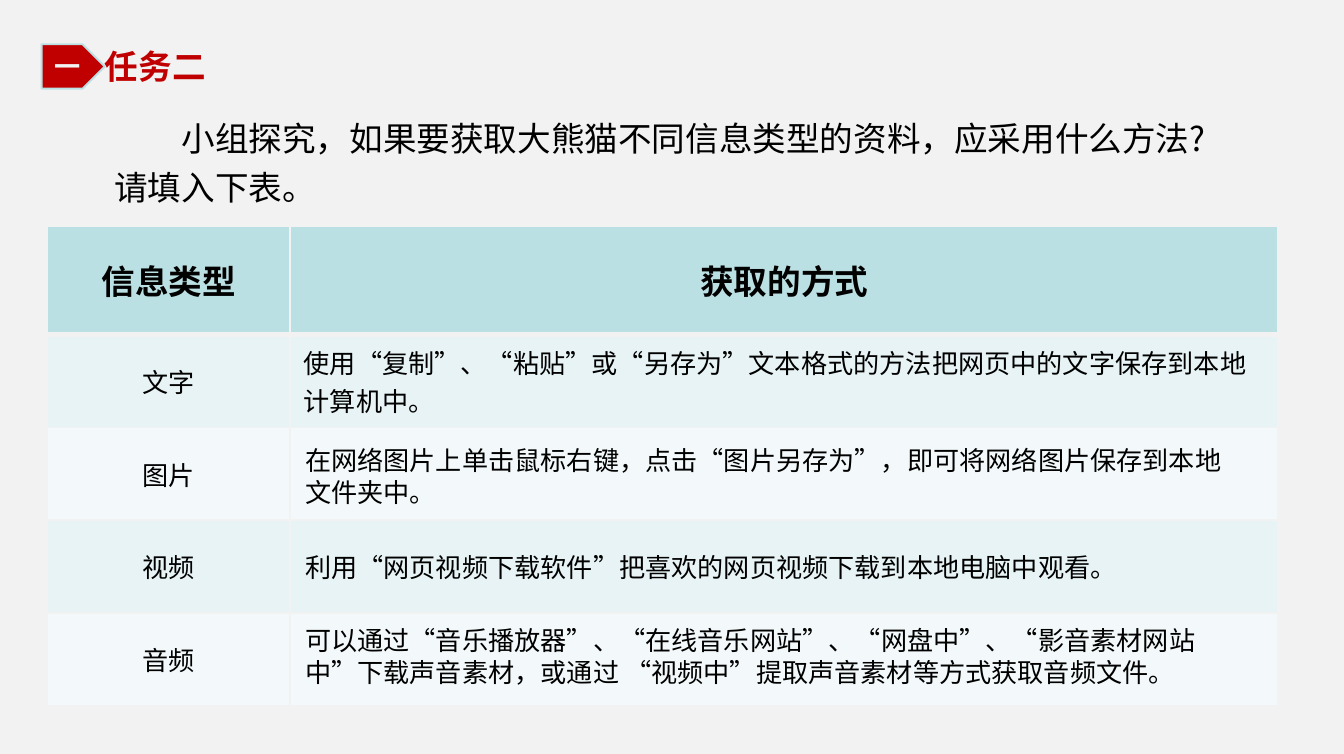
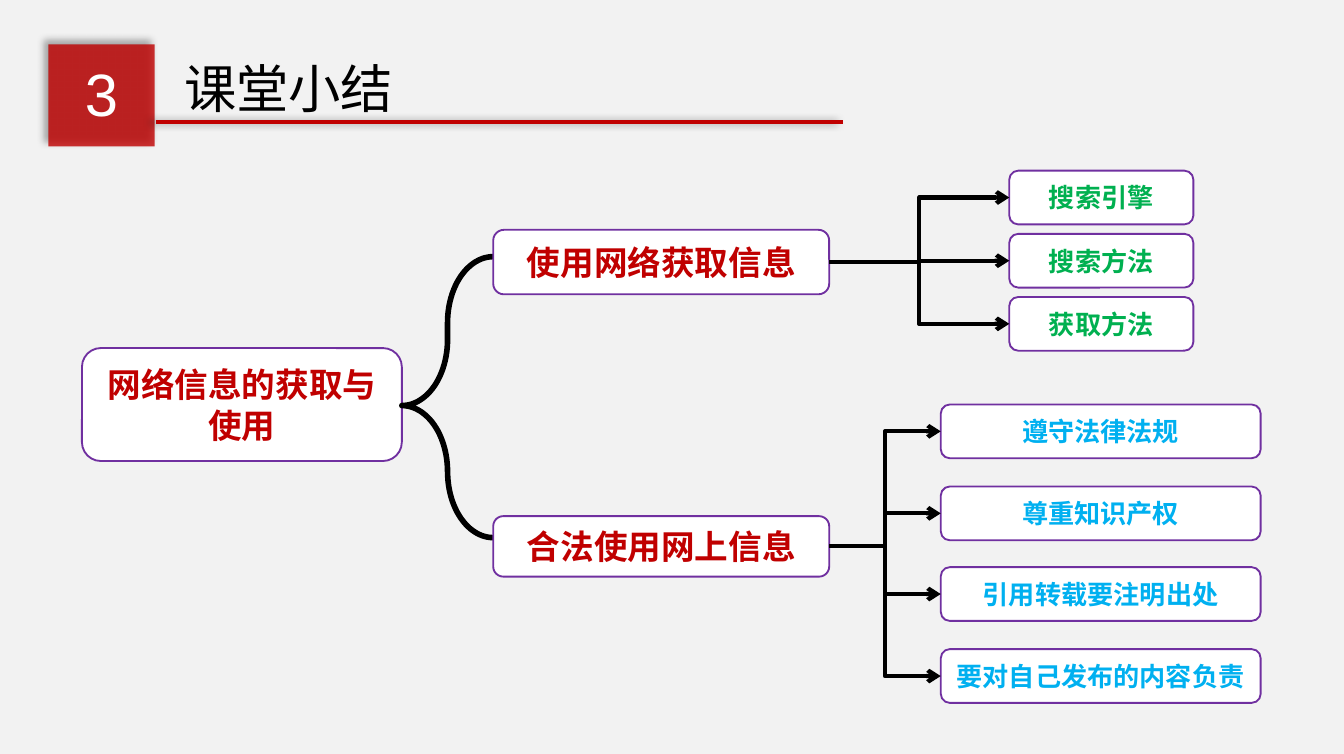
import dataclasses

import pptx
import pptx.dml.color
import pptx.enum.shapes
import pptx.enum.text
import pptx.oxml.ns
import pptx.util
from lxml import etree

Inches = pptx.util.Inches
Pt = pptx.util.Pt
qn = pptx.oxml.ns.qn
SHAPE = pptx.enum.shapes.MSO_SHAPE
CONNECTOR = pptx.enum.shapes.MSO_CONNECTOR
ALIGN = pptx.enum.text.PP_ALIGN
ANCHOR = pptx.enum.text.MSO_ANCHOR


@dataclasses.dataclass(frozen=True)
class Theme:
    background: str = "F2F2F2"
    red: str = "C00000"
    black: str = "000000"
    white: str = "FFFFFF"
    header: str = "BBE0E3"
    bands: tuple = ("E7F3F4", "F3F9FA")
    outline: str = "7030A0"
    green: str = "00B050"
    blue: str = "00B0F0"
    font: str = "Noto Sans CJK SC"
    digit_font: str = "Arial"
    number_size: int = 32
    section_size: int = 28
    lead_size: int = 18
    body_size: int = 14


@dataclasses.dataclass(frozen=True)
class Box:
    left: float
    top: float
    width: float
    height: float

    def inner(self, left, top, width, height):
        return Box(self.left + left, self.top + top, width, height)

    def emu(self):
        return [Inches(round(v, 2)) for v in dataclasses.astuple(self)]


THEME = Theme()


def rgb(value):
    return pptx.dml.color.RGBColor.from_string(value)


def write(frame, text, size, color=THEME.black, bold=False, align=ALIGN.LEFT,
          font=THEME.font, spacing=None):
    paragraph = frame.paragraphs[0]
    paragraph.alignment = align
    if spacing:
        paragraph.line_spacing = spacing
    run = paragraph.add_run()
    run.text = text
    run.font.size = Pt(size)
    run.font.bold = bold
    run.font.name = font
    run.font.color.rgb = rgb(color)
    etree.SubElement(run.font._element, qn("a:ea"), typeface=font)
    return paragraph


def set_frame(frame, margin=0.05, wrap=True, anchor=ANCHOR.TOP):
    frame.word_wrap = wrap
    frame.auto_size = pptx.enum.text.MSO_AUTO_SIZE.NONE
    frame.vertical_anchor = anchor
    for side in ("left", "right", "top", "bottom"):
        setattr(frame, f"margin_{side}", Inches(margin))


def add_text(slide, box, text, size, **style):
    frame = slide.shapes.add_textbox(*box.emu()).text_frame
    set_frame(frame)
    return write(frame, text, size, **style)


def add_title(slide, box, text, size, margin=0.05, **style):
    title = slide.shapes.title
    title.left, title.top, title.width, title.height = box.emu()
    set_frame(title.text_frame, margin, wrap=False)
    write(title.text_frame, text, size, **style)


def add_filled(slide, kind, box, fill, outline=None):
    shape = slide.shapes.add_shape(kind, *box.emu())
    shape.shadow.inherit = False
    shape.fill.solid()
    shape.fill.fore_color.rgb = rgb(fill)
    if outline:
        shape.line.color.rgb = rgb(outline)
        shape.line.width = Pt(1)
    else:
        shape.line.fill.background()
    set_frame(shape.text_frame, anchor=ANCHOR.MIDDLE)
    return shape


def add_line(slide, kind, start, end, color):
    line = slide.shapes.add_connector(kind, *[Inches(v) for v in start + end])
    line.line.color.rgb = rgb(color)
    line.line.width = Pt(2.25)
    etree.SubElement(line._element.spPr, qn("a:effectLst"))
    return line


def cast_shadow(shape, degrees):
    effects = shape._element.spPr.find(qn("a:effectLst"))
    shadow = etree.SubElement(
        effects, qn("a:outerShdw"), blurRad=str(Pt(4)), dist=str(Pt(3)),
        dir=str(degrees * 60000), rotWithShape="0")
    color = etree.SubElement(shadow, qn("a:srgbClr"), val=THEME.black)
    etree.SubElement(color, qn("a:alpha"), val="40000")


def border_cell(cell, top, bottom):
    properties = cell._tc.get_or_add_tcPr()
    widths = {"lnL": 1, "lnR": 1, "lnT": top, "lnB": bottom}
    for index, (side, width) in enumerate(widths.items()):
        edge = etree.Element(qn(f"a:{side}"), w=str(Pt(width)))
        fill = etree.SubElement(edge, qn("a:solidFill"))
        etree.SubElement(fill, qn("a:srgbClr"), val=THEME.background)
        properties.insert(index, edge)


def task_heading(slide, box):
    add_title(slide, box.inner(0.47, 0.01, 1.2, 0.3), "任务二", THEME.lead_size,
              margin=0, color=THEME.red, bold=True)
    tag = add_filled(slide, SHAPE.PENTAGON, box.inner(0, 0, 0.47, 0.33),
                     THEME.red, THEME.header)
    write(tag.text_frame, "一", THEME.body_size, color=THEME.background,
          bold=True, align=ALIGN.CENTER)


def methods_table(slide, box):
    rows = (
        ("信息类型", "获取的方式"),
        ("文字", "使用“复制”、“粘贴”或“另存为”文本格式的方法把网页中的文字保存到本地计算机中。"),
        ("图片", ""),
        ("视频", ""),
        ("音频", ""),
    )
    table = slide.shapes.add_table(len(rows), 2, *box.emu()).table
    for column, width in zip(table.columns, (1.81, 7.35)):
        column.width = Inches(width)
    for r, texts in enumerate(rows):
        header = r == 0
        table.rows[r].height = Inches(0.81 if header else 0.69)
        for c, text in enumerate(texts):
            cell = table.cell(r, c)
            cell.vertical_anchor = ANCHOR.MIDDLE
            cell.fill.solid()
            cell.fill.fore_color.rgb = rgb(THEME.header if header else THEME.bands[(r - 1) % 2])
            border_cell(cell, 3 if r == 1 else 1, 3 if header else 1)
            if text:
                write(cell.text_frame, text,
                      THEME.lead_size if header else THEME.body_size, bold=header,
                      align=ALIGN.CENTER if header or c == 0 else ALIGN.LEFT)

    answers = (
        (1.58, 7.1, 0.57, "在网络图片上单击鼠标右键，点击“图片另存为”，即可将网络图片保存到本地文件夹中。"),
        (2.37, 7.1, 0.34, "利用“网页视频下载软件”把喜欢的网页视频下载到本地电脑中观看。"),
        (2.92, 7.19, 0.57, "可以通过“音乐播放器”、“在线音乐网站”、“网盘中”、“影音素材网站中”下载声音素材，"
                           "或通过 “视频中”提取声音素材等方式获取音频文件。"),
    )
    for top, width, height, text in answers:
        add_text(slide, box.inner(1.87, top, width, height), text, THEME.body_size)


def task_slide(slide):
    task_heading(slide, Box(0.31, 0.33, 1.67, 0.33))
    question = add_text(
        slide, Box(0.8, 0.77, 8.39, 0.82),
        "小组探究，如果要获取大熊猫不同信息类型的资料，应采用什么方法?请填入下表。",
        THEME.lead_size, spacing=1.2)
    question._p.get_or_add_pPr().set("indent", str(Inches(0.5)))
    methods_table(slide, Box(0.35, 1.68, 9.16, 3.57))


def section_heading(slide, box):
    square = add_filled(slide, SHAPE.RECTANGLE, box.inner(0.05, 0, 0.79, 0.76), THEME.red)
    color = square._element.spPr.find(qn("a:solidFill")).find(qn("a:srgbClr"))
    etree.SubElement(color, qn("a:alpha"), val="80000")
    cast_shadow(square, 225)
    add_text(slide, box.inner(0, 0.04, 0.89, 0.64), "3", THEME.number_size,
             color=THEME.white, align=ALIGN.CENTER, font=THEME.digit_font)
    add_title(slide, box.inner(1.01, 0.04, 1.71, 0.57), "课堂小结", THEME.section_size)
    level = box.top + 0.58
    rule = add_line(slide, CONNECTOR.STRAIGHT, (box.left + 0.85, level),
                    (box.left + box.width, level), THEME.red)
    cast_shadow(rule, 180)


def add_node(slide, box, text, size, color):
    node = add_filled(slide, SHAPE.FLOWCHART_ALTERNATE_PROCESS, box,
                      THEME.white, THEME.outline)
    write(node.text_frame, text, size, color=color, bold=True, align=ALIGN.CENTER)
    return node


def link(slide, parent, child):
    arrow = add_line(slide, CONNECTOR.ELBOW, (0, 0), (1, 1), THEME.black)
    arrow.begin_connect(parent, 3)
    arrow.end_connect(child, 1)
    etree.SubElement(arrow._element.spPr.find(qn("a:ln")), qn("a:tailEnd"), type="arrow")


def branch(slide, box, topic, topic_top, topic_height, points, point_width, color):
    parent = add_node(slide, box.inner(0, topic_top, 2.5, topic_height),
                      topic, THEME.lead_size, THEME.red)
    point_height = 0.4
    step = (box.height - point_height) / (len(points) - 1)
    for i, text in enumerate(points):
        point = add_node(
            slide, box.inner(box.width - point_width, i * step, point_width, point_height),
            text, THEME.body_size, color)
        link(slide, parent, point)


def summary_map(slide, box):
    add_node(slide, box.inner(0, 1.32, 2.38, 0.84), "网络信息的获取与使用",
             THEME.lead_size, THEME.red)
    brace = slide.shapes.add_shape(SHAPE.LEFT_BRACE, *box.inner(2.38, 0.64, 0.68, 2.09).emu())
    brace.shadow.inherit = False
    brace.fill.background()
    brace.line.color.rgb = rgb(THEME.black)
    brace.line.width = Pt(3)
    brace.adjustments[0] = 0.75
    brace.adjustments[1] = 0.53
    branch(slide, box.inner(3.06, 0, 5.21, 1.34), "使用网络获取信息", 0.44, 0.48,
           ("搜索引擎", "搜索方法", "获取方法"), 1.37, THEME.green)
    branch(slide, box.inner(3.06, 1.74, 5.71, 2.22), "合法使用网上信息", 0.83, 0.45,
           ("遵守法律法规", "尊重知识产权", "引用转载要注明出处", "要对自己发布的内容负责"),
           2.38, THEME.blue)


def summary_slide(slide):
    section_heading(slide, Box(0.31, 0.33, 5.96, 0.76))
    summary_map(slide, Box(0.61, 1.27, 8.78, 3.96))


def main():
    deck = pptx.Presentation()
    deck.slide_width, deck.slide_height = Inches(10), Inches(5.61)
    backdrop = deck.slide_master.background.fill
    backdrop.solid()
    backdrop.fore_color.rgb = rgb(THEME.background)
    for build in (task_slide, summary_slide):
        build(deck.slides.add_slide(deck.slide_layouts[5]))
    deck.save("out.pptx")


if __name__ == "__main__":
    main()
